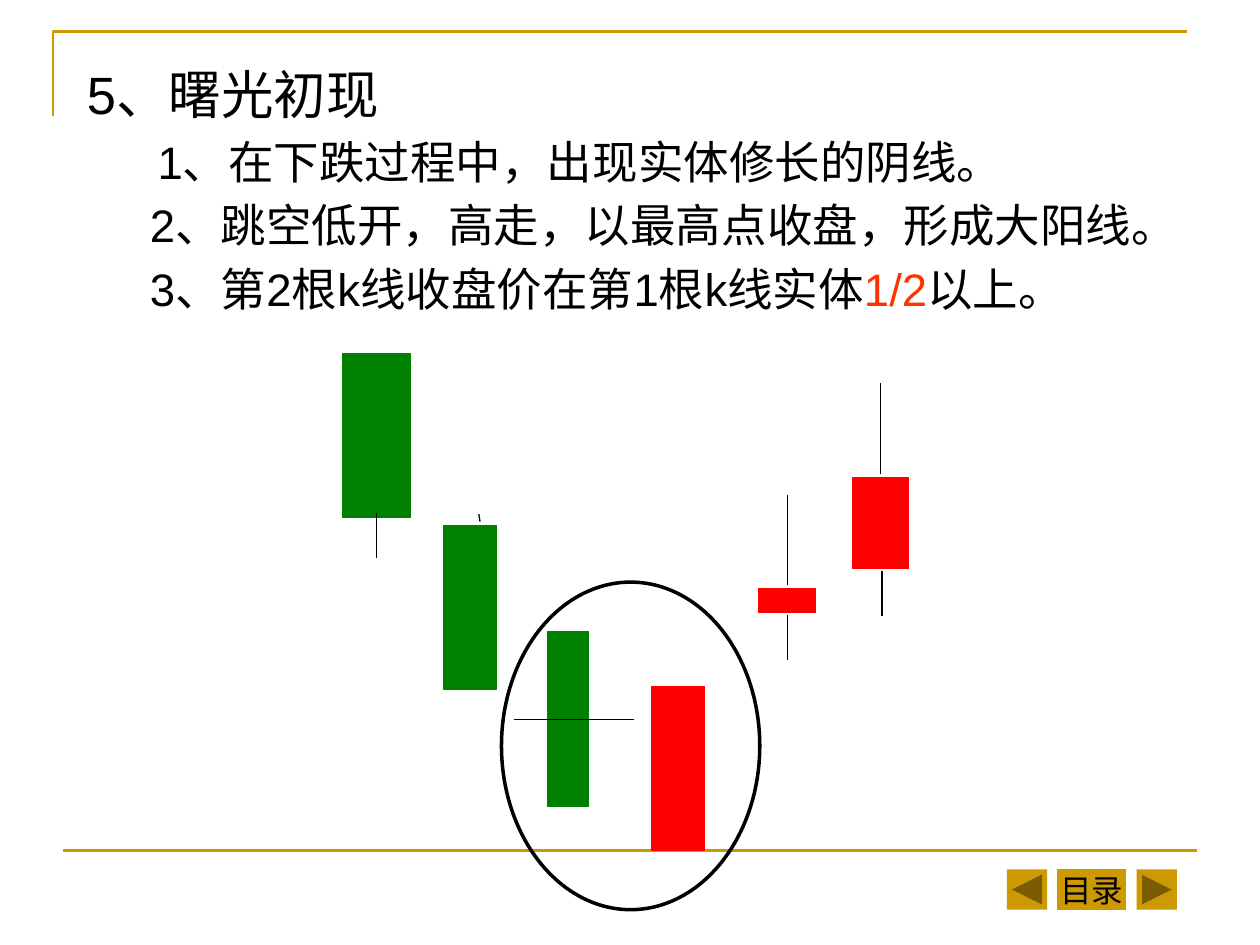
from lxml.etree import SubElement as Sub
from pptx import Presentation
from pptx.dml.color import RGBColor
from pptx.enum.shapes import MSO_CONNECTOR as Conn, MSO_SHAPE as Kind
from pptx.enum.text import MSO_ANCHOR as Anchor, MSO_AUTO_SIZE as Fit, PP_ALIGN as Align
from pptx.oxml.ns import qn
from pptx.util import Inches, Pt

GOLD = RGBColor(0xCC, 0x99, 0x00)
GREEN = RGBColor(0x00, 0x80, 0x00)
RED = RGBColor(0xFF, 0x00, 0x00)
ORANGE = RGBColor(0xFF, 0x33, 0x00)
BLACK = RGBColor(0x00, 0x00, 0x00)
FONT = "Arial"

# Indent, size and runs of each line of text
LINES = [
    (0, 30, ["5、曙光初现"]),
    (0.56, 26, ["1、在下跌过程中，出现实体修长的阴线。"]),
    (0.5, 26, ["2、跳空低开，高走，以最高点收盘，形成大阳线。"]),
    (0.5, 26, ["3、第2根k线收盘价在第1根k线实体", "1/2", "以上。"]),
]

# Colour and box of each candle body
BODIES = [
    (GREEN, 2.72, 2.81, 0.54, 1.3),
    (GREEN, 3.52, 4.17, 0.42, 1.3),
    (GREEN, 4.35, 5.01, 0.32, 1.39),
    (RED, 5.17, 5.45, 0.42, 1.3),
    (RED, 6.02, 4.67, 0.45, 0.19),
    (RED, 6.77, 3.79, 0.44, 0.72),
]

# Ends of the wicks, then of the half-way mark
WICKS = [
    (2.99, 4.07, 2.99, 4.43),
    (3.8, 4.08, 3.81, 4.14),
    (6.25, 3.93, 6.25, 4.64),
    (6.25, 4.88, 6.25, 5.24),
    (6.99, 3.04, 6.99, 3.76),
    (7, 4.53, 7, 4.89),
    (4.08, 5.71, 5.03, 5.71),
]


def paint(shape, fill=None, edge=None, width=0.75):
    shape.shadow.inherit = False
    if fill is None:
        shape.fill.background()
    else:
        shape.fill.solid()
        shape.fill.fore_color.rgb = fill
    if edge is None:
        shape.line.fill.background()
    else:
        shape.line.color.rgb = edge
        shape.line.width = Pt(width)


def add_box(shapes, kind, box, fill=None, edge=None, width=0.75):
    shape = shapes.add_shape(kind, *map(Inches, box))
    paint(shape, fill, edge, width)
    return shape


def add_line(shapes, ends, color=BLACK, width=0.75):
    line = shapes.add_connector(Conn.STRAIGHT, *map(Inches, ends))
    line.line.color.rgb = color
    line.line.width = Pt(width)
    Sub(line._element.spPr, qn("a:effectLst"))


def add_frame(shapes):
    pen = shapes.build_freeform(Inches(0.42), Inches(0.92))
    corner = [(0.42, 0.25), (9.42, 0.25)]
    pen.add_line_segments([(Inches(x), Inches(y)) for x, y in corner], close=False)
    paint(pen.convert_to_shape(), edge=GOLD, width=1.5)
    add_line(shapes, (0.5, 6.75, 9.5, 6.75), GOLD, 1.5)


def add_menu(shapes):
    add_box(shapes, Kind.ACTION_BUTTON_BACK_OR_PREVIOUS, (7.99, 6.9, 0.32, 0.32), GOLD)
    add_box(shapes, Kind.ACTION_BUTTON_FORWARD_OR_NEXT, (9.02, 6.9, 0.32, 0.32), GOLD)
    index = add_box(shapes, Kind.ACTION_BUTTON_CUSTOM, (8.39, 6.9, 0.55, 0.32), GOLD)
    frame = index.text_frame
    frame.word_wrap = False
    frame.vertical_anchor = Anchor.MIDDLE
    para = frame.paragraphs[0]
    para.text = "目录"
    para.alignment = Align.CENTER
    para.font.name, para.font.size = FONT, Pt(18)
    para.font.color.rgb = BLACK


def fill_body(body):
    body.left, body.top = Inches(0.59), Inches(0.44)
    body.width, body.height = Inches(9.07), Inches(2.39)
    frame = body.text_frame
    frame.word_wrap = True
    frame.auto_size = Fit.NONE
    frame.vertical_anchor = Anchor.TOP
    for i, (indent, size, runs) in enumerate(LINES):
        para = frame.add_paragraph() if i else frame.paragraphs[0]
        para.font.name, para.font.size = FONT, Pt(size)
        para.space_before = Pt(size * 0.2)
        props = para._p.get_or_add_pPr()
        props.set("marL", str(Inches(indent)))
        props.set("indent", "0")
        props.insert_element_before(
            props.makeelement(qn("a:buNone")), "a:tabLst", "a:defRPr", "a:extLst")
        for text in runs:
            run = para.add_run()
            run.text = text
            run.font.color.rgb = ORANGE if text == "1/2" else BLACK


def add_candles(shapes):
    group = shapes.add_group_shape().shapes
    for color, *box in BODIES:
        add_box(group, Kind.RECTANGLE, box, color, color)
    for ends in WICKS:
        add_line(group, ends)


def main():
    deck = Presentation()
    deck.slide_width, deck.slide_height = Inches(10), Inches(7.5)
    slide = deck.slides.add_slide(deck.slide_layouts[1])
    shapes = slide.shapes

    # Text; this slide has no separate title
    title = shapes.title._element
    title.getparent().remove(title)
    fill_body(slide.placeholders[1])

    # Frame lines and menu buttons
    add_frame(shapes)
    add_menu(shapes)

    # Candles and the ring around the pattern
    add_candles(shapes)
    add_box(shapes, Kind.OVAL, (3.98, 4.62, 2.05, 2.6), edge=BLACK, width=2)

    deck.save("out.pptx")


if __name__ == "__main__":
    main()
